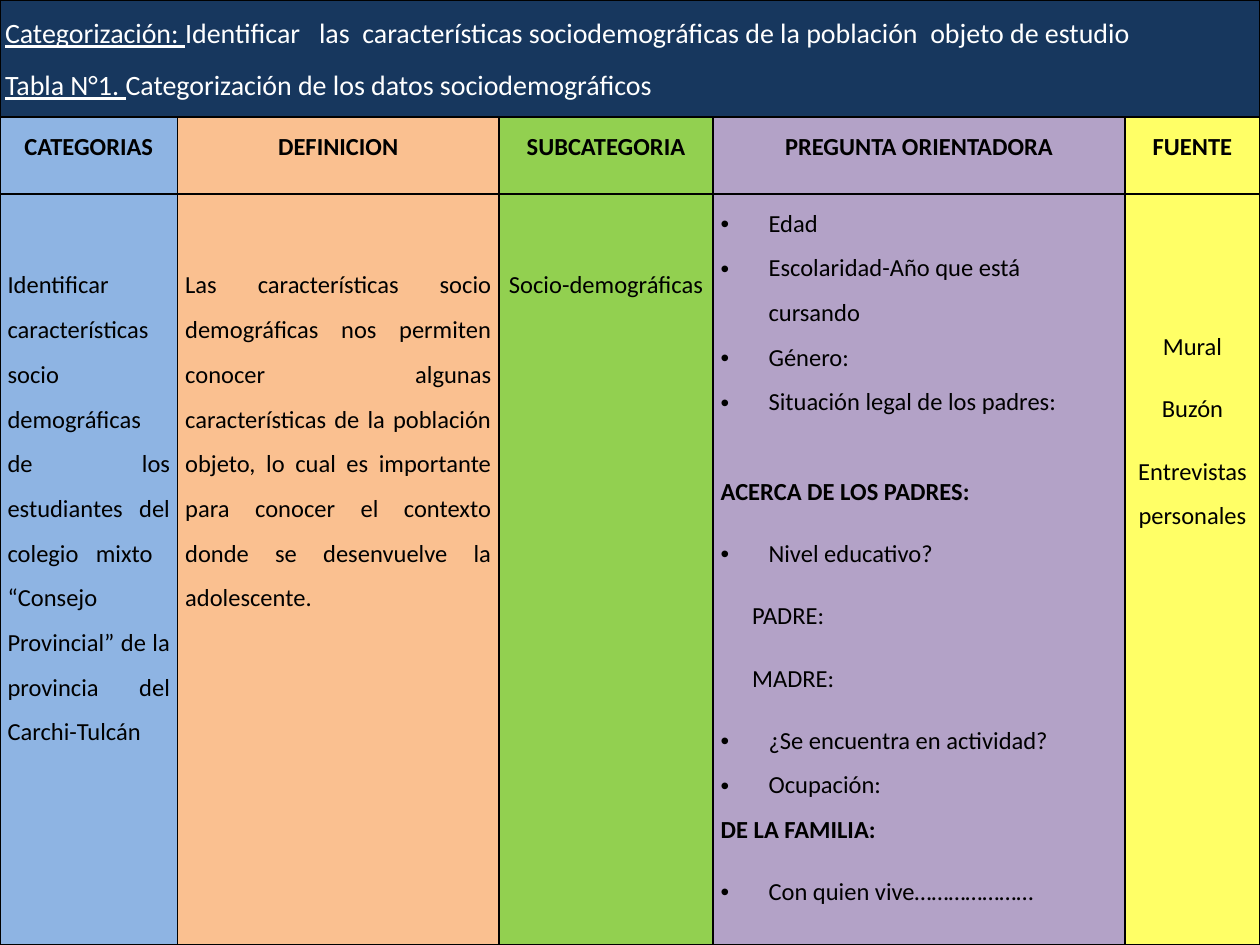
from dataclasses import dataclass

from lxml.etree import SubElement
from pptx import Presentation
from pptx.dml.color import RGBColor
from pptx.enum.text import PP_ALIGN as Align
from pptx.oxml.ns import qn
from pptx.util import Inches, Pt


@dataclass(frozen=True)
class Theme:
    font: str = "Calibri"
    title_size: int = 16
    body_size: int = 14
    line_spacing: float = 1.5
    after: float = 10
    border_pt: float = 1
    border: str = "000000"
    text: str = "000000"
    title_text: str = "FFFFFF"
    title_fill: str = "17375E"
    fills: tuple = ("8EB4E3", "FAC090", "92D050", "B3A2C7", "FFFF66")


@dataclass(frozen=True)
class Para:
    text: str
    lead: str = ""  # underlined opening words
    align: Align = Align.LEFT
    after: float = 0
    bold: bool = False
    bullet: bool = False
    left: float = 0


@dataclass(frozen=True)
class Column:
    header: str
    width: float
    paras: list
    top: float = 0


T = Theme()
LINE = 25.6  # height of one body line, in points
STEP = 0.49  # one body line and its spacing, in inches
ROWS = (0.93, 0.61, 5.96)


def centered(text: str, bold: bool = False) -> Para:
    return Para(text, align=Align.CENTER, after=T.after, bold=bold)


def justified(text: str, lead: str = "") -> Para:
    return Para(text, lead, align=Align.JUSTIFY, after=T.after)


def item(text: str, after: float = 0) -> Para:
    return Para(text, after=after, bullet=True, left=0.38)


def heading(text: str) -> Para:
    return Para(text, after=T.after, bold=True)


def parent(text: str) -> Para:
    return Para(text, after=T.after, left=0.25)


TITLE = [
    Para("Identificar   las  características sociodemográficas de la población  objeto de estudio",
         "Categorización: "),
    justified("Categorización de los datos sociodemográficos", "Tabla N°1. "),
]

COLUMNS = [
    Column("CATEGORIAS", 1.41, [justified(
        "Identificar características socio demográficas de los estudiantes del colegio mixto  "
        "“Consejo Provincial” de la provincia del Carchi-Tulcán")], STEP),
    Column("DEFINICION", 2.55, [justified(
        "Las características socio demográficas nos permiten conocer algunas características "
        "de la población objeto, lo cual es importante para conocer el contexto donde se "
        "desenvuelve la adolescente.")], STEP),
    Column("SUBCATEGORIA", 1.7, [centered("Socio-demográficas")], STEP),
    Column("PREGUNTA ORIENTADORA", 3.27, [
        item("Edad"),
        item("Escolaridad-Año que está cursando"),
        item("Género:"),
        item("Situación legal de los padres:", after=LINE),
        heading("ACERCA DE LOS PADRES:"),
        item("Nivel educativo?", after=T.after),
        parent("PADRE:"),
        parent("MADRE:"),
        item("¿Se encuentra en actividad?"),
        item("Ocupación:"),
        heading("DE LA FAMILIA:"),
        item("Con quien vive…………………"),
    ]),
    Column("FUENTE", 1.07, [centered(t) for t in ("Mural", "Buzón", "Entrevistas personales")],
           2 * STEP),
]


def add_run(p, text: str, *, size: float, color: str, bold: bool = False,
            underline: bool = False) -> None:
    r = p.add_run()
    r.text = text
    f = r.font
    f.name, f.size, f.bold, f.underline = T.font, Pt(size), bold, underline
    f.color.rgb = RGBColor.from_string(color)


def set_indent(p, para: Para) -> None:
    pPr = p._p.get_or_add_pPr()
    pPr.set("marL", str(Inches(para.left)))
    pPr.set("indent", str(Inches(-para.left if para.bullet else 0)))
    if para.bullet:
        SubElement(pPr, qn("a:buFont"), typeface="Arial")
        SubElement(pPr, qn("a:buChar"), char="•")


def set_borders(cell) -> None:
    tcPr = cell._tc.get_or_add_tcPr()
    for i, side in enumerate(("lnL", "lnR", "lnT", "lnB")):
        ln = SubElement(tcPr, qn(f"a:{side}"), w=str(Pt(T.border_pt)))
        fill = SubElement(ln, qn("a:solidFill"))
        SubElement(fill, qn("a:srgbClr"), val=T.border)
        tcPr.insert(i, ln)  # borders come before the fill


def fill_cell(cell, paras: list, *, fill: str, size: float = T.body_size,
              color: str = T.text, side: float = 0.06, top: float = 0) -> None:
    cell.fill.solid()
    cell.fill.fore_color.rgb = RGBColor.from_string(fill)
    cell.margin_left = cell.margin_right = Inches(side)
    cell.margin_top, cell.margin_bottom = Inches(top), Inches(0)
    tf = cell.text_frame
    for i, para in enumerate(paras):
        p = tf.add_paragraph() if i else tf.paragraphs[0]
        p.alignment, p.line_spacing = para.align, T.line_spacing
        p.space_before, p.space_after = Pt(0), Pt(para.after)
        set_indent(p, para)
        if para.lead:
            add_run(p, para.lead, size=size, color=color, underline=True)
        add_run(p, para.text, size=size, color=color, bold=para.bold)


def main() -> None:
    prs = Presentation()
    prs.slide_width, prs.slide_height = Inches(10), Inches(7.5)
    s = prs.slides.add_slide(prs.slide_layouts[6])

    # Table grid
    table = s.shapes.add_table(len(ROWS), len(COLUMNS), Inches(0), Inches(0),
                               prs.slide_width, prs.slide_height).table
    for row, height in zip(table.rows, ROWS):
        row.height = Inches(height)

    # Title row
    title = table.cell(0, 0)
    title.merge(table.cell(0, len(COLUMNS) - 1))
    fill_cell(title, TITLE, fill=T.title_fill, size=T.title_size,
              color=T.title_text, side=0.04)

    # Header and content of each column
    for i, (col, fill) in enumerate(zip(COLUMNS, T.fills)):
        table.columns[i].width = Inches(col.width)
        fill_cell(table.cell(1, i), [centered(col.header, bold=True)], fill=fill)
        fill_cell(table.cell(2, i), col.paras, fill=fill, top=col.top)

    for cell in table.iter_cells():
        set_borders(cell)

    prs.save("out.pptx")


if __name__ == "__main__":
    main()
